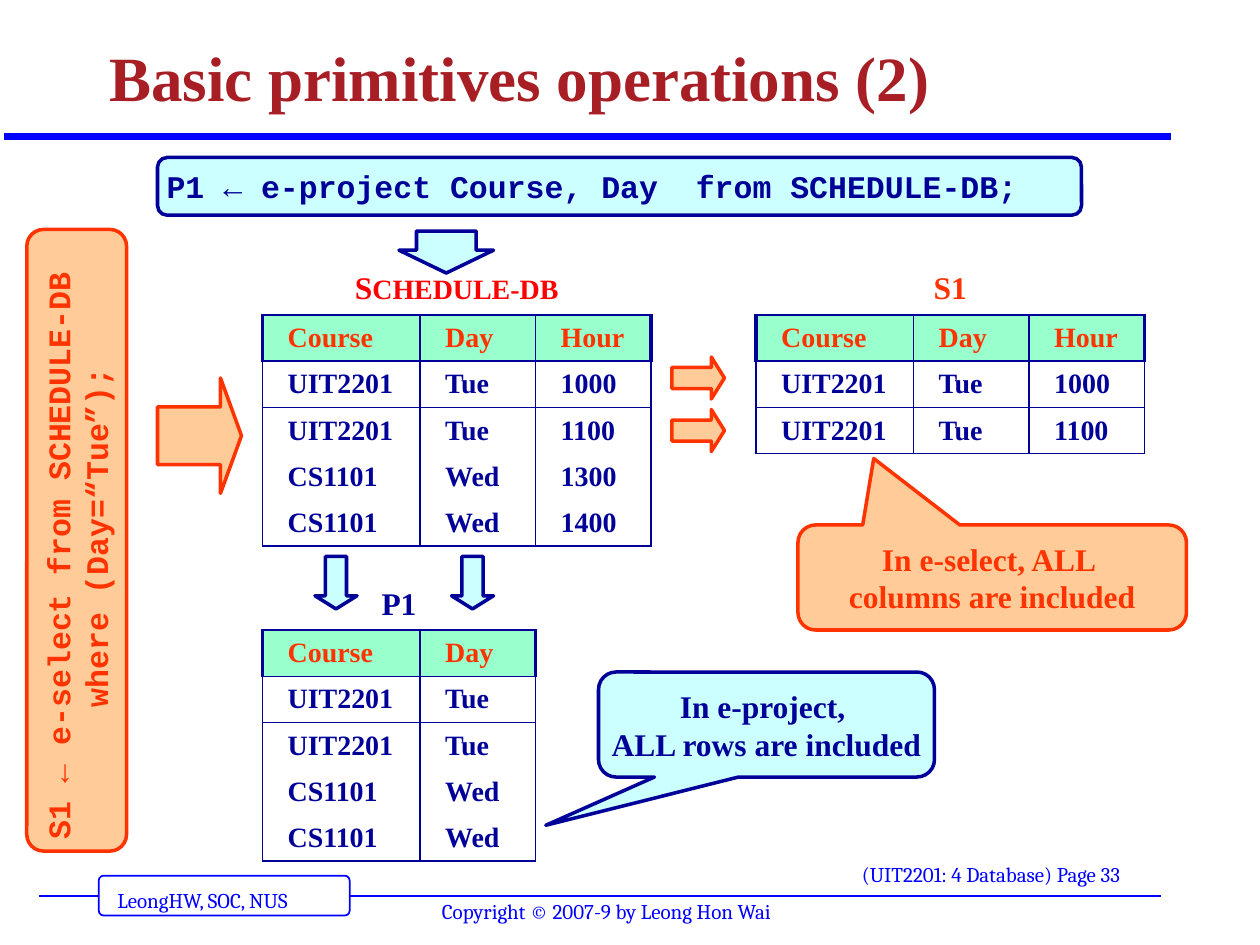
import pptx
import pptx.util
import pptx.dml.color
import pptx.enum.shapes
import pptx.enum.text
import pptx.oxml.ns
from lxml import etree

RGBColor = pptx.dml.color.RGBColor
SHAPE = pptx.enum.shapes.MSO_SHAPE
ALIGN = pptx.enum.text.PP_ALIGN
ANCHOR = pptx.enum.text.MSO_ANCHOR
qn = pptx.oxml.ns.qn

BLUE = RGBColor(0x00, 0x00, 0xFF)
NAVY = RGBColor(0x00, 0x00, 0x99)
CYAN = RGBColor(0xCC, 0xFF, 0xFF)
ORANGE = RGBColor(0xFF, 0x33, 0x00)
PEACH = RGBColor(0xFF, 0xCC, 0x99)
MINT = RGBColor(0x99, 0xFF, 0xCC)
RED = RGBColor(0xFF, 0x00, 0x00)
MAROON = RGBColor(0xA8, 0x1E, 0x25)
WHITE = RGBColor(0xFF, 0xFF, 0xFF)

PROJECT = (CYAN, NAVY)
SELECT = (PEACH, ORANGE)
SERIF = "Times New Roman"
CODE = "Courier New"
FOOTER = "Cambria"
NO_STYLE = "{2D5ABB26-0587-4C30-8999-92F81FD0307C}"

COLUMN_WIDTHS = (15, 11, 11)
ROW_HEIGHT = 4.4
HEADERS = ("Course", "Day", "Hour")
SCHEDULE = (
    ("UIT2201", "Tue", "1000"),
    ("UIT2201", "Tue", "1100"),
    ("CS1101", "Wed", "1300"),
    ("CS1101", "Wed", "1400"),
)


def grid(units):
    return pptx.util.Inches(units / 12)


def place(left, top, width, height):
    return [grid(value) for value in (left, top, width, height)]


def add_run(paragraph, text, font, size, color, bold=True):
    run = paragraph.add_run()
    run.text = text
    run.font.name = font
    run.font.size = pptx.util.Pt(size)
    run.font.bold = bold
    run.font.color.rgb = color


def set_margins(target, horizontal, vertical=0.05):
    target.margin_left = target.margin_right = pptx.util.Inches(horizontal)
    target.margin_top = target.margin_bottom = pptx.util.Inches(vertical)


def add_block(shapes, kind, box, colors, adjustments, rotation=0, line_width=2):
    shape = shapes.add_shape(kind, *place(*box))
    shape.shadow.inherit = False
    shape.rotation = rotation
    shape.fill.solid()
    shape.fill.fore_color.rgb, shape.line.color.rgb = colors
    shape.line.width = pptx.util.Pt(line_width)
    for index, value in enumerate(adjustments):
        shape.adjustments[index] = value
    return shape


def write_lines(shape, lines, font, color, alignment, second_indent=0):
    frame = shape.text_frame
    frame.word_wrap = True
    frame.vertical_anchor = ANCHOR.MIDDLE
    set_margins(frame, 0.05)
    for index, line in enumerate(lines):
        paragraph = frame.paragraphs[0] if index == 0 else frame.add_paragraph()
        paragraph.alignment = alignment
        if index and second_indent:
            properties = paragraph._p.get_or_add_pPr()
            properties.set("marL", str(pptx.util.Inches(second_indent)))
        add_run(paragraph, line, font, 18, color)


def add_rule(slide, left, right, top, width):
    line = slide.shapes.add_connector(
        pptx.enum.shapes.MSO_CONNECTOR.STRAIGHT,
        grid(left), grid(top), grid(right), grid(top))
    line.line.color.rgb = BLUE
    line.line.width = pptx.util.Pt(width)
    etree.SubElement(line._element.spPr, qn("a:effectLst"))


def add_footer_text(slide, box, text):
    frame = slide.shapes.add_textbox(*place(*box)).text_frame
    frame.word_wrap = False
    set_margins(frame, 0.1)
    add_run(frame.paragraphs[0], text, FOOTER, 12, BLUE, bold=False)


def set_borders(cell, widths):
    properties = cell._tc.get_or_add_tcPr()
    for side in "LRTB":
        if side in widths:
            border = etree.SubElement(properties, qn(f"a:ln{side}"),
                                      w=str(pptx.util.Pt(widths[side])))
            fill = etree.SubElement(border, qn("a:solidFill"))
            etree.SubElement(fill, qn("a:srgbClr"), val=str(NAVY))


def format_cell(cell, runs, borders, fill=None, alignment=ALIGN.LEFT):
    cell.vertical_anchor = ANCHOR.MIDDLE
    set_margins(cell, 0.2)
    set_borders(cell, borders)
    if fill is None:
        cell.fill.background()
    else:
        cell.fill.solid()
        cell.fill.fore_color.rgb = fill
    paragraph = cell.text_frame.paragraphs[0]
    paragraph.alignment = alignment
    for text, size, color in runs:
        add_run(paragraph, text, SERIF, size, color)


def add_relation(slide, left, top, caption, records, column_count, caption_height):
    widths = COLUMN_WIDTHS[:column_count]
    row_count = len(records) + 2
    height = caption_height + ROW_HEIGHT * (row_count - 1)
    table = slide.shapes.add_table(
        row_count, column_count, *place(left, top, sum(widths), height)).table
    table._tbl.tblPr.find(qn("a:tableStyleId")).text = NO_STYLE
    table.first_row = table.horz_banding = False
    for column, width in zip(table.columns, widths):
        column.width = grid(width)
    for index, row in enumerate(table.rows):
        row.height = grid(ROW_HEIGHT if index else caption_height)

    table.cell(0, 0).merge(table.cell(0, column_count - 1))
    for column in range(column_count):
        format_cell(table.cell(0, column), [] if column else caption,
                    {"B": 1}, alignment=ALIGN.CENTER)
        header_borders = {"L": 1 if column else 2.25, "T": 1, "B": 1,
                          "R": 2.25 if column == column_count - 1 else 1}
        format_cell(table.cell(1, column), [(HEADERS[column], 16, ORANGE)],
                    header_borders, MINT)
        for row, record in enumerate(records, start=2):
            borders = {"L": 1, "R": 1}
            if row == 2:
                borders["T"] = 1
            if row == row_count - 1:
                borders["B"] = 1
            format_cell(table.cell(row, column), [(record[column], 16, NAVY)], borders)


def add_arrow_group(slide, positions, colors, rotation=0):
    group = slide.shapes.add_group_shape()
    for left, top in positions:
        add_block(group.shapes, SHAPE.DOWN_ARROW, (left, top, 4, 5), colors,
                  (0.5, 0.312), rotation)


def add_title(slide, text):
    title = slide.shapes.title
    title.left, title.top, title.width, title.height = place(9.2, 1, 102, 10.6)
    frame = title.text_frame
    frame.vertical_anchor = ANCHOR.BOTTOM
    set_margins(frame, 0.1)
    paragraph = frame.paragraphs[0]
    paragraph.alignment = ALIGN.LEFT
    paragraph.line_spacing = 0.9
    add_run(paragraph, text, SERIF, 36, MAROON)


def add_frame(slide):
    add_rule(slide, 3.7, 110.6, 85.3, 1)
    add_block(slide.shapes, SHAPE.ROUNDED_RECTANGLE, (9.4, 83.4, 23.9, 3.8),
              (WHITE, BLUE), (0.125,), line_width=1)
    add_rule(slide, 0.4, 111.5, 13, 4)
    add_footer_text(slide, (10, 83.9, 21.8, 3.6), "LeongHW, SOC, NUS")
    add_footer_text(slide, (80.9, 81.5, 29.9, 3.6), "(UIT2201: 4 Database) Page 33")
    add_footer_text(slide, (40.9, 85, 36.8, 3.6), "Copyright © 2007-9 by Leong Hon Wai")


def add_statement(slide, box, colors, lines, rotation=0, second_indent=0):
    shape = add_block(slide.shapes, SHAPE.ROUNDED_RECTANGLE, box, colors, (0.167,), rotation)
    write_lines(shape, lines, CODE, colors[1], ALIGN.LEFT, second_indent)


def add_callout(slide, box, colors, pointer, lines):
    shape = add_block(slide.shapes, SHAPE.ROUNDED_RECTANGULAR_CALLOUT, box, colors,
                      (*pointer, 0.167))
    write_lines(shape, lines, SERIF, colors[1], ALIGN.CENTER)


def main():
    presentation = pptx.Presentation()
    presentation.slide_width, presentation.slide_height = grid(120), grid(90)
    slide = presentation.slides.add_slide(presentation.slide_layouts[5])
    add_frame(slide)
    add_title(slide, "Basic primitives operations (2)")
    add_arrow_group(slide, [(30, 53), (43, 53)], PROJECT)
    add_statement(slide, (15, 15, 88, 5.5), PROJECT,
                  ["P1 ← e-project Course, Day  from SCHEDULE-DB;"])
    add_relation(slide, 25, 25, [("S", 18, RED), ("CHEDULE-DB", 16, RED)], SCHEDULE, 3, 5)
    add_relation(slide, 25, 55.2, [("P1", 18, NAVY)], SCHEDULE, 2, 4.8)
    add_statement(slide, (-22.3, 46.7, 59.2, 9.5), SELECT,
                  ["S1 ← e-select from SCHEDULE-DB ", "where (Day=“Tue”);"], 270, 1.05)
    add_block(slide.shapes, SHAPE.RIGHT_ARROW, (15, 36, 8, 11), SELECT, (0.5, 0.25))
    add_arrow_group(slide, [(64.5, 33.5), (64.5, 38.5)], SELECT, 270)
    add_relation(slide, 72, 25, [("S1", 18, ORANGE)], SCHEDULE[:2], 3, 5)
    add_block(slide.shapes, SHAPE.RIGHT_ARROW, (40.5, 19.5, 4, 9), PROJECT,
              (0.63, 0.542), 90)
    add_callout(slide, (57, 64, 32, 10), PROJECT, (-0.657, 0.96),
                ["In e-project, ", "ALL rows are included"])
    add_callout(slide, (76, 50, 37, 10), SELECT, (-0.305, -1.133),
                ["In e-select, ALL ", "columns are included"])
    presentation.save("out.pptx")


if __name__ == "__main__":
    main()
